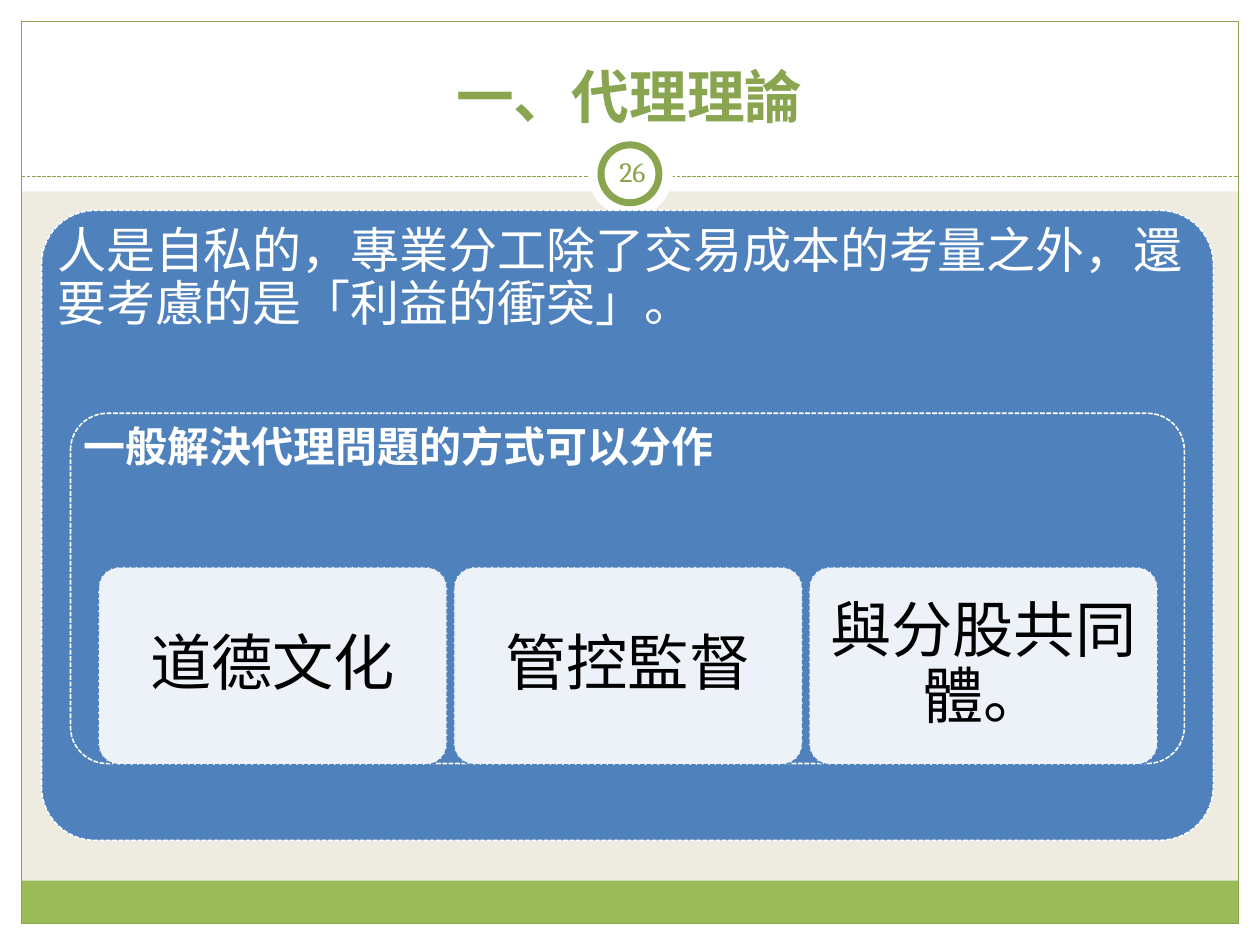
from lxml.etree import SubElement
from pptx import Presentation
from pptx.dml.color import RGBColor
from pptx.enum.dml import MSO_LINE
from pptx.enum.shapes import MSO_CONNECTOR, MSO_SHAPE
from pptx.enum.text import MSO_ANCHOR, PP_ALIGN
from pptx.oxml.ns import qn
from pptx.util import Inches, Pt

WHITE = RGBColor(0xFF, 0xFF, 0xFF)
BLACK = RGBColor(0, 0, 0)
BEIGE = RGBColor(0xEE, 0xEC, 0xE1)
GREEN = RGBColor(0x9B, 0xBB, 0x59)
OLIVE = RGBColor(0x89, 0xA5, 0x4F)
BLUE = RGBColor(0x4F, 0x81, 0xBD)

TITLE = "一、代理理論"
PAGE = "26"
PREMISE = "人是自私的，專業分工除了交易成本的考量之外，還要考慮的是「利益的衝突」。"
METHODS_HEAD = "一般解決代理問題的方式可以分作"
METHODS = ["道德文化", "管控監督", "與分股共同體。"]

W, H = 10, 7.5
EDGE = 0.17
HEADER_H, RULE_Y = 1.52, 1.4
CARD_X, CARD_Y, CARD_W, CARD_H, CARD_GAP = 0.78, 4.5, 2.77, 1.57, 0.05

prs = Presentation()
prs.slide_width, prs.slide_height = Inches(W), Inches(H)
s = prs.slides.add_slide(prs.slide_layouts[5])
s.background.fill.solid()
s.background.fill.fore_color.rgb = BEIGE


def add_box(box, fill=None, line=None, width=0.75, dash=None,
            kind=MSO_SHAPE.RECTANGLE):
    sp = s.shapes.add_shape(kind, *map(Inches, box))
    sp.shadow.inherit = False
    if fill is None:
        sp.fill.background()
    else:
        sp.fill.solid()
        sp.fill.fore_color.rgb = fill
    if line is None:
        sp.line.fill.background()
    else:
        sp.line.color.rgb = line
        sp.line.width = Pt(width)
        sp.line.dash_style = dash
    return sp


def write(sp, text, size, font, color, bold=False, align=PP_ALIGN.LEFT,
          anchor=MSO_ANCHOR.TOP, margin=0.05, spacing=None):
    tf = sp.text_frame
    tf.word_wrap = True
    tf.vertical_anchor = anchor
    tf.margin_left = tf.margin_right = Inches(margin)
    tf.margin_top = tf.margin_bottom = Inches(margin)
    p = tf.paragraphs[0]
    p.alignment = align
    p.line_spacing = spacing
    r = p.add_run()
    r.text = text
    r.font.size, r.font.name, r.font.bold = Pt(size), font, bold
    r.font.color.rgb = color


def add_panel(box, radius, fill, line, inset, text, size, font, color, **style):
    """Dashed rounded panel; inset is measured from its outer edge."""
    sp = add_box(box, fill, line, 0.9, MSO_LINE.SQUARE_DOT,
                 MSO_SHAPE.ROUNDED_RECTANGLE)
    sp.adjustments[0] = radius
    corner = 0.29 * radius * min(box[2:])
    write(sp, text, size, font, color, margin=max(0, inset - corner),
          spacing=0.9, **style)
    return sp


# Page frame
for box in [(0, H - EDGE, W, EDGE), (0, 0, W, HEADER_H),
            (0, 0, EDGE, H), (W - EDGE, 0, EDGE, H)]:
    add_box(box, WHITE)
add_box((EDGE, 6.99, W - 2 * EDGE, 0.34), GREEN)
add_box((EDGE, EDGE, W - 2 * EDGE, H - 2 * EDGE), line=OLIVE)

rule = s.shapes.add_connector(MSO_CONNECTOR.STRAIGHT, Inches(EDGE), Inches(RULE_Y),
                              Inches(W - EDGE), Inches(RULE_Y))
rule.line.color.rgb = OLIVE
rule.line.width = Pt(0.75)
rule.line.dash_style = MSO_LINE.SQUARE_DOT
SubElement(rule._element.spPr, qn("a:effectLst"))

# Page number badge
add_box((4.67, 1.05, 0.67, 0.67), WHITE, kind=MSO_SHAPE.OVAL)
add_box((4.77, 1.15, 0.46, 0.46), WHITE, OLIVE, 4, kind=MSO_SHAPE.OVAL)
centred = dict(align=PP_ALIGN.CENTER, anchor=MSO_ANCHOR.MIDDLE)
number = s.shapes.add_textbox(*map(Inches, (4.77, 1.12, 0.5, 0.48)))
write(number, PAGE, 16, "Cambria", OLIVE, **centred)

# Title, brought in front of the header band
title = s.shapes.title
title.left, title.top, title.width, title.height = map(
    Inches, (0.33, 0.25, 9.33, 0.83))
write(title, TITLE, 33, "Cambria", OLIVE, bold=True,
      align=PP_ALIGN.CENTER, anchor=MSO_ANCHOR.BOTTOM)
s.shapes._spTree.append(title._element)

# Nested panels
add_panel((0.33, 1.67, 9.3, 5), 0.085, BLUE, WHITE, 0.12,
          PREMISE, 28, "Arial", WHITE)
add_panel((0.56, 3.28, 8.84, 2.78), 0.105, BLUE, WHITE, 0.1,
          METHODS_HEAD, 24, "Arial", WHITE, bold=True)
for i, method in enumerate(METHODS):
    x = CARD_X + i * (CARD_W + CARD_GAP)
    card = add_panel((x, CARD_Y, CARD_W, CARD_H), 0.105, WHITE, BLUE, 0.15,
                     method, 35, "Cambria", BLACK, **centred)
    color = card.fill._xPr.find(qn("a:solidFill"))[0]
    SubElement(color, qn("a:alpha"), val="90000")

prs.save("out.pptx")
